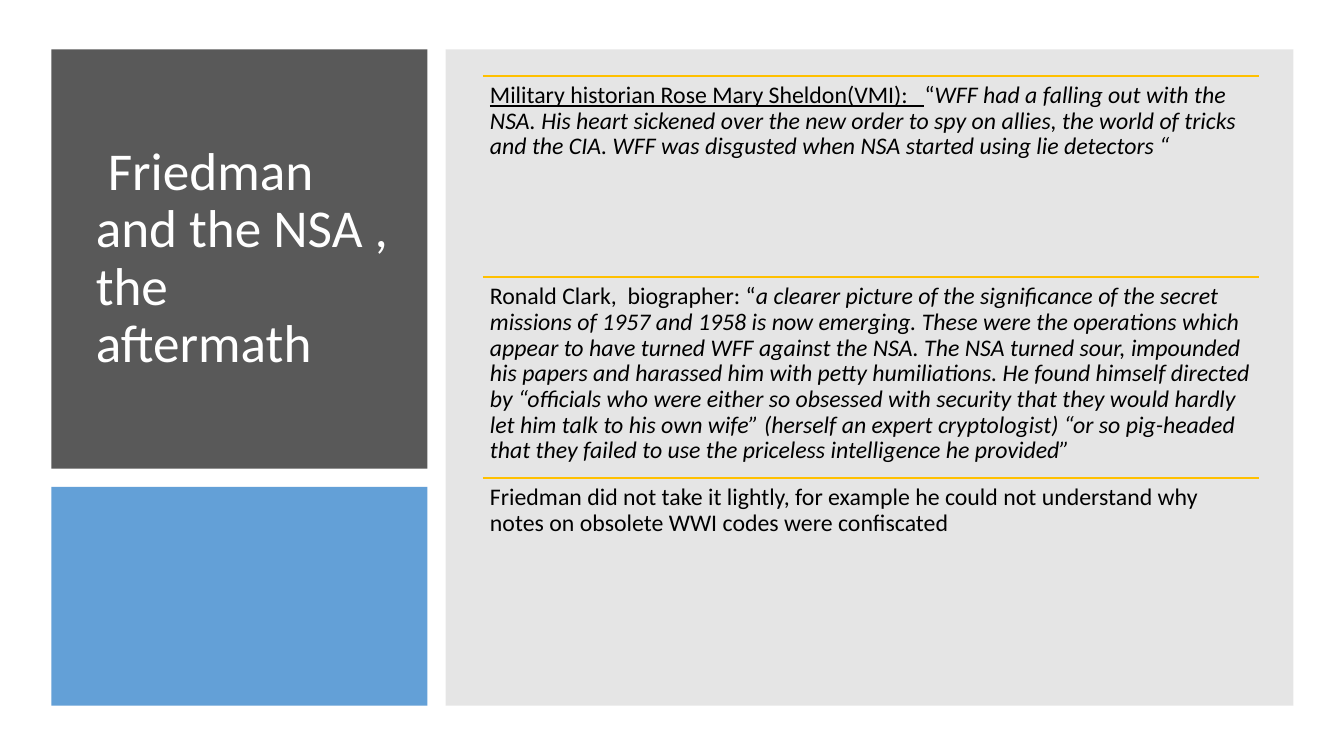
from lxml.etree import SubElement
from pptx import Presentation
from pptx.dml.color import RGBColor as RGB
from pptx.enum.shapes import MSO_CONNECTOR as CONN, MSO_SHAPE as SHAPE
from pptx.enum.text import MSO_ANCHOR as ANCHOR, MSO_AUTO_SIZE as AUTO, PP_ALIGN as ALIGN
from pptx.oxml.ns import qn
from pptx.util import Pt

COLORS = {"dark": "595959", "blue": "5B9BD5", "gray": "808080",
          "gold": "FFC000", "white": "FFFFFF", "black": "000000"}

QUOTES = [
    [("Military historian Rose Mary Sheldon(VMI):   ", {"underline": True}),
     ("“", {}),
     ("WFF had a falling out with the NSA. His heart sickened over the new order "
      "to spy on allies, the world of tricks and the CIA. WFF was disgusted when "
      "NSA started using lie detectors “", {"italic": True})],
    [("Ronald Clark,  biographer: “", {}),
     ("a clearer picture of the significance of the secret missions of 1957 and "
      "1958 is now emerging. These were the operations which appear to have turned "
      "WFF against the NSA. The NSA turned sour, impounded his papers and harassed "
      "him with petty humiliations. He found himself directed by “officials who "
      "were either so obsessed with security that they would hardly let him talk "
      "to his own wife” (herself an expert cryptologist) “or so pig-headed that "
      "they failed to use the priceless intelligence he provided”", {"italic": True})],
    [("Friedman did not take it lightly, for example he could not understand why "
      "notes on obsolete WWI codes were confiscated", {})],
]


def apply(obj, values):
    for name, value in values.items():
        setattr(obj, name, value)


def box(x, y, w, h):
    return dict(zip(("left", "top", "width", "height"), map(Pt, (x, y, w, h))))


class Deck:
    font = "Calibri"

    def __init__(self, w, h):
        self.prs = Presentation()
        apply(self.prs, {"slide_width": Pt(w), "slide_height": Pt(h)})
        self.s = self.prs.slides.add_slide(self.prs.slide_layouts[5])

    def color(self, name):
        return RGB.from_string(COLORS[name])

    def fill_text(self, sp, runs, size, color, frame, para):
        tf = sp.text_frame
        apply(tf, {"word_wrap": True, "auto_size": AUTO.NONE, **frame})
        p = tf.paragraphs[0]
        apply(p, {"alignment": ALIGN.LEFT, "line_spacing": 0.9, **para})
        for text, style in runs:
            r = p.add_run()
            r.text = text
            apply(r.font, {"name": self.font, "size": Pt(size), **style})
            r.font.color.rgb = self.color(color)

    def panel(self, x, y, w, h, color, opacity=100):
        sp = self.s.shapes.add_shape(SHAPE.RECTANGLE, **box(x, y, w, h))
        sp.shadow.inherit = False
        sp.fill.solid()
        sp.fill.fore_color.rgb = self.color(color)
        sp.line.fill.background()
        if opacity < 100:
            clr = sp.element.spPr.find(".//" + qn("a:srgbClr"))
            SubElement(clr, qn("a:alpha"), val=str(opacity * 1000))

    def title(self, text, x, y, w, h):
        sp = self.s.shapes.title
        apply(sp, box(x, y, w, h))
        sp.element.getparent().append(sp.element)
        self.fill_text(sp, [(text, {})], 38, "white",
                       {"vertical_anchor": ANCHOR.MIDDLE}, {})

    def rule(self, x, y, w):
        sp = self.s.shapes.add_connector(CONN.STRAIGHT, Pt(x), Pt(y), Pt(x + w), Pt(y))
        sp.line.color.rgb = self.color("gold")
        sp.line.width = Pt(1)
        SubElement(sp.element.spPr, qn("a:effectLst"))

    def quote(self, runs, x, y, w, h):
        sp = self.s.shapes.add_textbox(**box(x, y, w, h))
        sides = ("left", "top", "right", "bottom")
        frame = {f"margin_{side}": Pt(5.1) for side in sides}
        self.fill_text(sp, runs, 17, "black",
                       {"vertical_anchor": ANCHOR.TOP, **frame}, {"space_after": Pt(6)})


def main():
    d = Deck(960, 540)
    left, top, side_w = 36.8, 35.3, 268.6
    d.panel(left, top, side_w, 299.5, "dark")
    d.title(" Friedman and the NSA , the aftermath", 61.2, 57.6, 223.9, 254.9)
    d.panel(left, 347.8, side_w, 156.2, "blue", 95)
    d.panel(318.3, top, 605.5, 468.7, "gray", 20)
    x, y, w, step = 344.9, 54.2, 554.4, 143.6
    for i, runs in enumerate(QUOTES):
        d.rule(x, y + i * step, w)
        d.quote(runs, x, y + i * step, w, step)
    d.prs.save("out.pptx")


if __name__ == "__main__":
    main()
